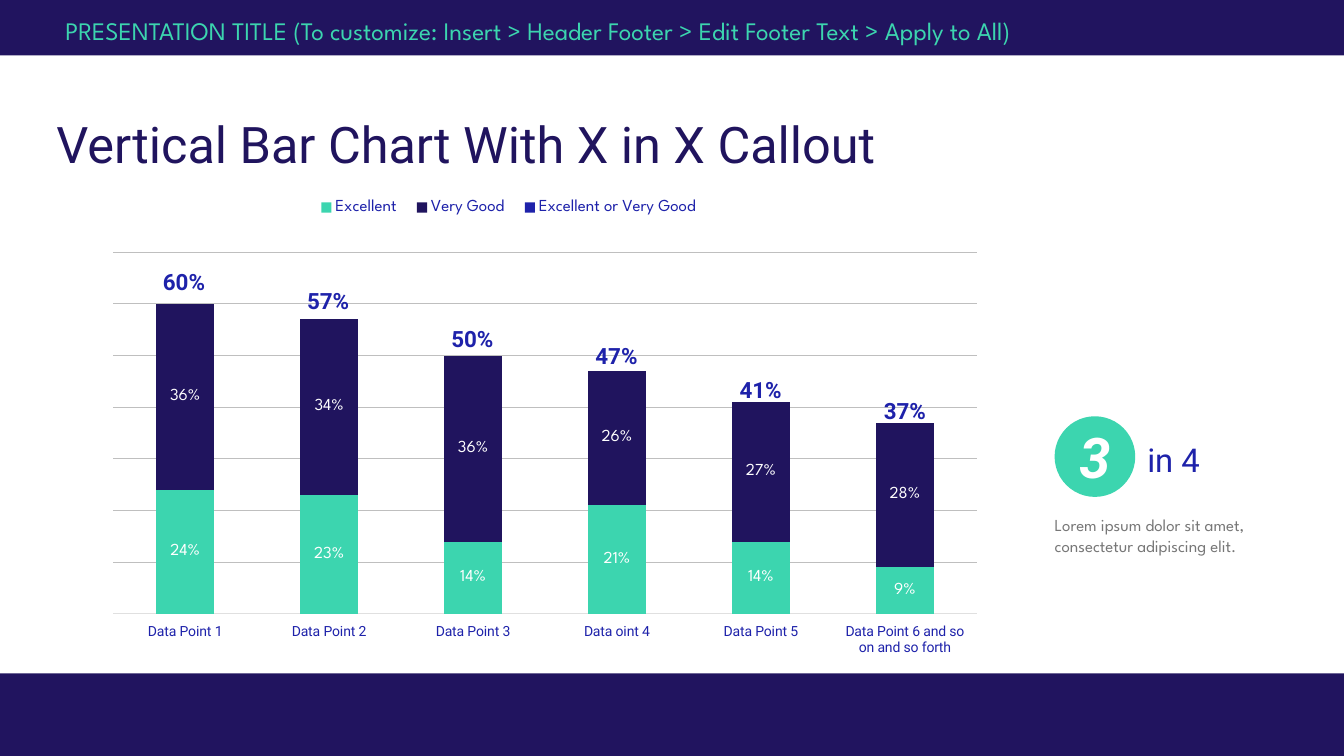
"""Build a slide with a stacked column chart and a ratio callout."""
from pptx import Presentation
from pptx.chart.data import CategoryChartData
from pptx.dml.color import RGBColor
from pptx.enum.chart import XL_CHART_TYPE, XL_LEGEND_POSITION, XL_TICK_LABEL_POSITION, XL_TICK_MARK
from pptx.enum.shapes import MSO_SHAPE
from pptx.enum.text import MSO_ANCHOR, PP_ALIGN
from pptx.oxml import parse_xml
from pptx.oxml.ns import nsdecls
from pptx.util import Inches, Pt

STACKED = XL_CHART_TYPE.COLUMN_STACKED
BOTTOM = XL_LEGEND_POSITION.BOTTOM
LOW = XL_TICK_LABEL_POSITION.LOW
NO_TICK = XL_TICK_MARK.NONE
RECT, OVAL = MSO_SHAPE.RECTANGLE, MSO_SHAPE.OVAL
TOP, MIDDLE = MSO_ANCHOR.TOP, MSO_ANCHOR.MIDDLE
LEFT, CENTER = PP_ALIGN.LEFT, PP_ALIGN.CENTER

NAVY = RGBColor(0x21, 0x14, 0x5F)
INK = RGBColor(0x20, 0x14, 0x5E)
TEAL = RGBColor(0x3C, 0xD5, 0xAF)
BLUE = RGBColor(0x1E, 0x22, 0xAA)
GREY = RGBColor(0x77, 0x77, 0x77)
DARK = RGBColor(0x33, 0x33, 0x33)
GRID = RGBColor(0xBF, 0xBF, 0xBF)
PALE = RGBColor(0xE0, 0xE0, 0xE0)
WHITE = RGBColor(0xFF, 0xFF, 0xFF)

SPARTAN, ROBOTO = "League Spartan", "Roboto"
HEAD = {"name": ROBOTO, "size": Pt(36), "color": INK}
BANNER = {"name": SPARTAN, "size": Pt(18), "color": TEAL}
TOTAL = {"name": ROBOTO, "size": Pt(16), "color": BLUE, "bold": True}
RATIO = {"name": ROBOTO, "size": Pt(23.4), "color": BLUE}
COUNT = {"name": ROBOTO, "size": Pt(40), "color": WHITE, "bold": True, "italic": True}
NOTE = {"name": SPARTAN, "size": Pt(12), "color": GREY}
BASE = {"name": SPARTAN, "size": Pt(12), "color": DARK}
KEY = {**BASE, "color": BLUE}
VALUE = {**BASE, "color": WHITE}
AXIS = {"name": ROBOTO, "size": Pt(10), "color": BLUE}

POINTS = ["Data Point 1", "Data Point 2", "Data Point 3", "Data oint 4",
          "Data Point 5", "Data Point 6 and so on and so forth"]
GREAT = [0.24, 0.23, 0.14, 0.21, 0.14, 0.09]
GOOD = [0.36, 0.34, 0.36, 0.26, 0.27, 0.28]
SERIES = [("Excellent", GREAT, TEAL), ("Very Good", GOOD, INK),
          ("Excellent or Very Good", [None] * len(POINTS), BLUE)]
TOTALS = [(0.60, 2.61), (0.57, 2.8), (0.50, 3.18), (0.47, 3.35), (0.41, 3.68), (0.37, 3.89)]


def style(font, look):
    """Apply a dict of format values to a font."""
    for name, value in look.items():
        if name == "color":
            font.color.rgb = value
        else:
            setattr(font, name, value)


def write(shape, text, look, align=LEFT, anchor=TOP, inset=True):
    """Put one styled paragraph into a shape."""
    frame = shape.text_frame
    frame.word_wrap = True
    frame.vertical_anchor = anchor
    if not inset:
        for side in ("left", "top", "right", "bottom"):
            setattr(frame, f"margin_{side}", 0)
    para = frame.paragraphs[0]
    para.alignment = align
    run = para.add_run()
    run.text = text
    style(run.font, look)
    return para


def add_text(slide, box, text, look, **layout):
    """Add a text box and return its paragraph."""
    return write(slide.shapes.add_textbox(*map(Inches, box)), text, look, **layout)


def add_block(slide, kind, box, color):
    """Add a plain filled shape."""
    shape = slide.shapes.add_shape(kind, *map(Inches, box))
    shape.shadow.inherit = False
    shape.fill.solid()
    shape.fill.fore_color.rgb = color
    shape.line.fill.background()
    return shape


def place(part, index, box, target=""):
    """Give a chart part a fixed layout in fractions of the chart."""
    for old in part.xpath("c:layout"):
        part.remove(old)
    modes = '<c:xMode val="edge"/><c:yMode val="edge"/>'
    sizes = "".join(f'<c:{name} val="{value}"/>' for name, value in zip("xywh", box))
    part.insert(index, parse_xml(
        f'<c:layout {nsdecls("c")}><c:manualLayout>{target}{modes}{sizes}'
        "</c:manualLayout></c:layout>"))


def draw_line(line, color):
    """Draw a thin chart line."""
    line.color.rgb = color
    line.width = Pt(0.75)


def set_axes(chart):
    """Format the category axis and hide the value axis."""
    points, scale = chart.category_axis, chart.value_axis
    for axis in (points, scale):
        axis.major_tick_mark = axis.minor_tick_mark = NO_TICK
    points.tick_label_position = LOW
    style(points.tick_labels.font, AXIS)
    draw_line(points.format.line, PALE)
    limits = {"visible": False, "minimum_scale": 0, "maximum_scale": 0.7, "major_unit": 0.1}
    for name, value in limits.items():
        setattr(scale, name, value)
    draw_line(scale.major_gridlines.format.line, GRID)


def add_chart(slide, box):
    """Add the stacked columns with their legend and labels."""
    data = CategoryChartData(number_format="0%")
    data.categories = POINTS
    for name, values, _ in SERIES:
        data.add_series(name, values)
    chart = slide.shapes.add_chart(STACKED, *map(Inches, box), data).chart
    chart.has_title = False
    style(chart.font, BASE)
    set_axes(chart)
    plot = chart.plots[0]
    plot.vary_by_categories = False
    plot.gap_width, plot.overlap = 150, 100
    for series, (_, _, color) in zip(plot.series, SERIES):
        series.format.fill.solid()
        series.format.fill.fore_color.rgb = color
        labels = series.data_labels
        labels.show_value = True
        labels.number_format = "0%"
        labels.number_format_is_linked = False
        style(labels.font, VALUE)
    chart.has_legend = True
    chart.legend.position = BOTTOM
    chart.legend.include_in_layout = False
    style(chart.legend.font, KEY)
    area, legend = (chart.element.xpath(f"c:chart/c:{tag}")[0] for tag in ("plotArea", "legend"))
    place(area, 0, (0.054, 0.136, 0.919, 0.694), '<c:layoutTarget val="inner"/>')
    place(legend, 1, (0.26, 0.02, 0.43, 0.06))


def add_totals(slide):
    """Add the column totals at equal steps."""
    for index, (total, top) in enumerate(TOTALS):
        box = (1.44 + 1.43 * index, top, 0.77, 0.37)
        add_text(slide, box, f"{total:.0%}", TOTAL, align=CENTER)


def add_callout(slide):
    """Add the ratio with its badge and note."""
    add_text(slide, (11.16, 4.26, 0.96, 0.6), "in 4", RATIO,
             align=CENTER, anchor=MIDDLE, inset=False)
    badge = add_block(slide, OVAL, (10.46, 4.13, 0.8, 0.8), TEAL)
    write(badge, "3", COUNT, align=CENTER, anchor=MIDDLE, inset=False)
    add_text(slide, (10.46, 5.11, 2.08, 0.61),
             "Lorem ipsum dolor sit amet, consectetur adipiscing elit.", NOTE, inset=False)


def main():
    """Build and save the slide."""
    deck = Presentation()
    deck.slide_width, deck.slide_height = Inches(13.33), Inches(7.5)
    slide = deck.slides.add_slide(deck.slide_layouts[6])
    add_block(slide, RECT, (-0.18, -0.27, 13.79, 0.82), NAVY)
    add_block(slide, RECT, (0, 6.68, 13.33, 0.82), NAVY)
    title = add_text(slide, (0.56, 1.19, 11.58, 1.09),
                     "Vertical Bar Chart With X in X Callout", HEAD, inset=False)
    title.line_spacing = 0.9
    add_text(slide, (0.55, 0.1, 11.56, 0.4),
             "PRESENTATION TITLE (To customize: Insert > Header Footer > "
             "Edit Footer Text > Apply to All)", BANNER)
    add_chart(slide, (0.62, 1.8, 9.32, 5.17))
    add_totals(slide)
    add_callout(slide)
    deck.save("out.pptx")


if __name__ == "__main__":
    main()
